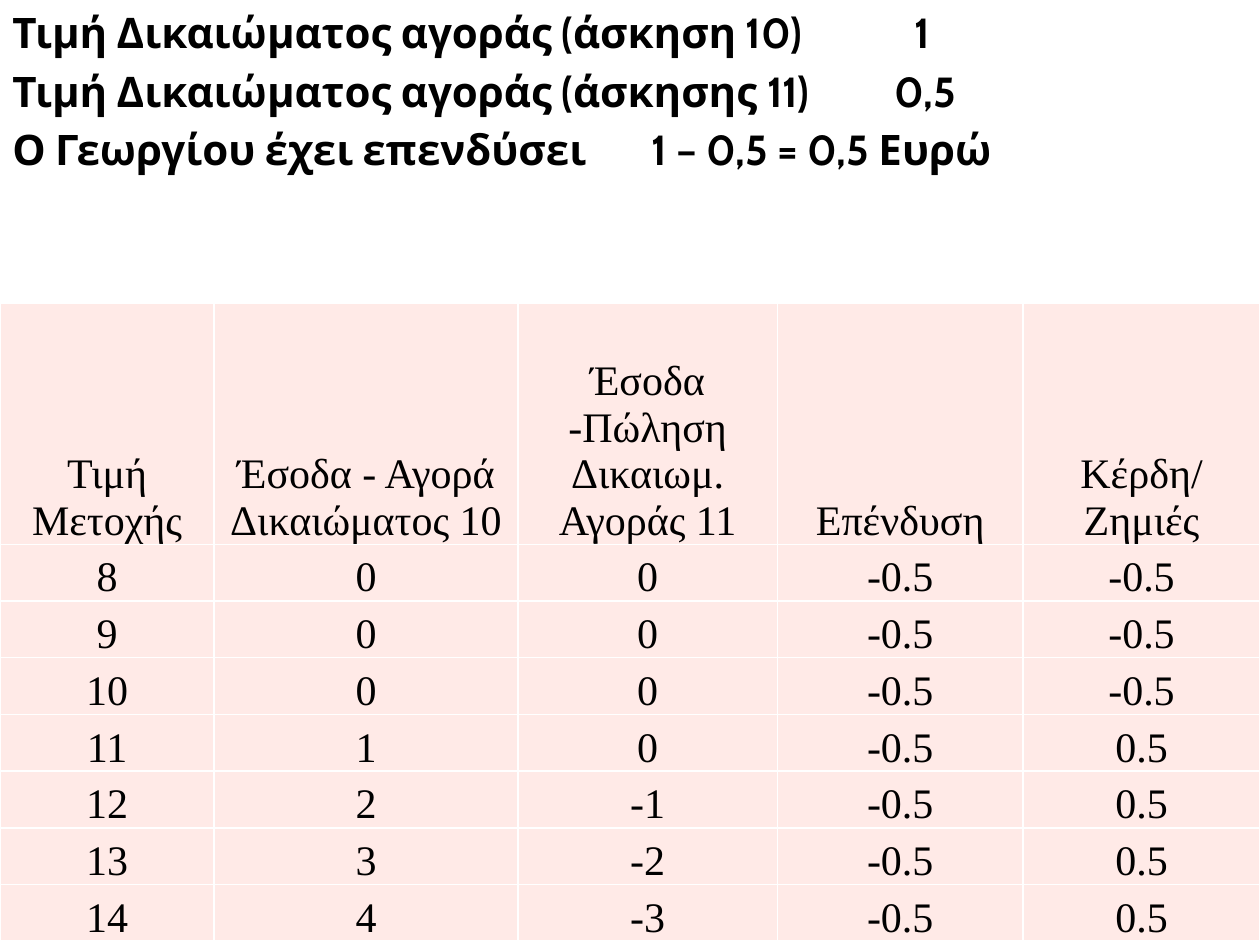
from lxml import etree
from pptx import Presentation
from pptx.dml.color import RGBColor
from pptx.enum.text import MSO_ANCHOR, PP_ALIGN
from pptx.oxml.ns import qn
from pptx.util import Inches, Pt

CENTER = PP_ALIGN.CENTER
JUSTIFY = PP_ALIGN.JUSTIFY
TOP = MSO_ANCHOR.TOP
BOTTOM = MSO_ANCHOR.BOTTOM

COLORS = {"paper": "FFFFFF", "ink": "000000", "cell": "FFEAE7"}
BORDERS = ("a:lnL", "a:lnR", "a:lnT", "a:lnB")

NOTES = [
    ("Τιμή Δικαιώματος αγοράς (άσκηση 10)", "1", 7.16),
    ("Τιμή Δικαιώματος αγοράς (άσκησης 11)", "0,5", 7.0),
    ("Ο Γεωργίου έχει επενδύσει", "1 – 0,5 = 0,5 Ευρώ", 5.07),
]
HEADERS = [
    "Τιμή Μετοχής",
    "Έσοδα - Αγορά Δικαιώματος 10",
    "Έσοδα -Πώληση Δικαιωμ. Αγοράς 11",
    "Επένδυση",
    "Κέρδη/ Ζημιές",
]
PAYOFFS = [
    ("8", "0", "0", "-0.5", "-0.5"),
    ("9", "0", "0", "-0.5", "-0.5"),
    ("10", "0", "0", "-0.5", "-0.5"),
    ("11", "1", "0", "-0.5", "0.5"),
    ("12", "2", "-1", "-0.5", "0.5"),
    ("13", "3", "-2", "-0.5", "0.5"),
    ("14", "4", "-3", "-0.5", "0.5"),
]
COLUMN_WIDTHS = [1.7, 2.41, 2.06, 1.95, 1.88]
HEADER_HEIGHT = 1.91
ROW_HEIGHT = 0.45


def set_attributes(target, values):
    for name, value in values.items():
        setattr(target, name, value)


class SlideBuilder:
    note_font = {"name": "Cabin", "size": Pt(24), "bold": True}
    cell_font = {"name": "Times New Roman", "size": Pt(24), "bold": False}
    cell_format = {
        "vertical_anchor": BOTTOM,
        "margin_left": Inches(0.01),
        "margin_right": Inches(0.01),
        "margin_top": Inches(0.01),
        "margin_bottom": 0,
    }

    def __init__(self, slide):
        self.slide = slide

    def style_font(self, paragraph, values):
        set_attributes(paragraph.font, values)
        paragraph.font.color.rgb = RGBColor.from_string(COLORS["ink"])

    def add_tab(self, paragraph, position):
        properties = paragraph._p.get_or_add_pPr()
        tabs = etree.SubElement(properties, qn("a:tabLst"))
        etree.SubElement(tabs, qn("a:tab"), pos=str(Inches(position)), algn="l")

    def add_notes(self, left, top, width, height, notes):
        shape = self.slide.shapes.add_textbox(
            Inches(left), Inches(top), Inches(width), Inches(height)
        )
        shape.fill.solid()
        shape.fill.fore_color.rgb = RGBColor.from_string(COLORS["paper"])
        frame = shape.text_frame
        set_attributes(frame, {"word_wrap": True, "vertical_anchor": TOP})
        for index, (label, value, position) in enumerate(notes):
            paragraph = frame.add_paragraph() if index else frame.paragraphs[0]
            paragraph.text = f"{label}\t{value}"
            paragraph.alignment = JUSTIFY
            paragraph.space_before = Pt(4.8 if index else 0)
            self.add_tab(paragraph, position)
            self.style_font(paragraph, self.note_font)

    def add_borders(self, cell):
        properties = cell._tc.get_or_add_tcPr()
        for index, tag in enumerate(BORDERS):
            line = etree.Element(qn(tag), w=str(Pt(1)))
            fill = etree.SubElement(line, qn("a:solidFill"))
            etree.SubElement(fill, qn("a:srgbClr"), val=COLORS["paper"])
            properties.insert(index, line)

    def fill_cell(self, cell, text):
        cell.text = text
        set_attributes(cell, self.cell_format)
        cell.fill.solid()
        cell.fill.fore_color.rgb = RGBColor.from_string(COLORS["cell"])
        paragraph = cell.text_frame.paragraphs[0]
        paragraph.alignment = CENTER
        self.style_font(paragraph, self.cell_font)
        self.add_borders(cell)

    def add_table(self, left, top, rows, widths, heights):
        table = self.slide.shapes.add_table(
            len(rows), len(widths), Inches(left), Inches(top),
            Inches(sum(widths)), Inches(sum(heights)),
        ).table
        set_attributes(table, {"first_row": False, "horz_banding": False})
        for column, width in zip(table.columns, widths):
            column.width = Inches(width)
        for row, height, texts in zip(table.rows, heights, rows):
            row.height = Inches(height)
            for cell, text in zip(row.cells, texts):
                self.fill_cell(cell, text)


def main():
    presentation = Presentation()
    presentation.slide_width = Inches(10)
    presentation.slide_height = Inches(7.5)
    slide = presentation.slides.add_slide(presentation.slide_layouts[6])
    builder = SlideBuilder(slide)
    builder.add_notes(0, 0, 10, 2.18, NOTES)
    heights = [HEADER_HEIGHT] + [ROW_HEIGHT] * len(PAYOFFS)
    builder.add_table(0, 2.41, [HEADERS] + PAYOFFS, COLUMN_WIDTHS, heights)
    presentation.save("out.pptx")


if __name__ == "__main__":
    main()
